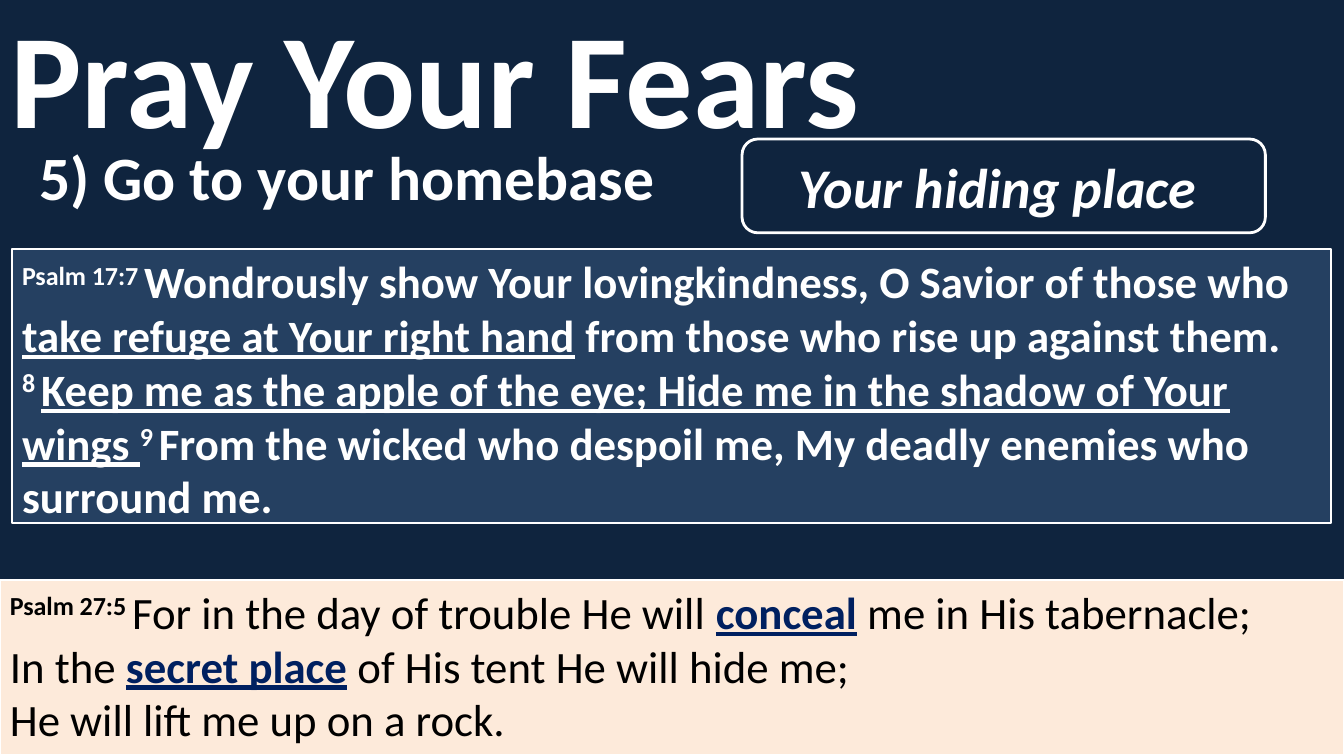
from pptx import Presentation
from pptx.dml.color import RGBColor
from pptx.enum.shapes import MSO_SHAPE
from pptx.enum.text import MSO_ANCHOR, MSO_AUTO_SIZE, PP_ALIGN
from pptx.oxml.ns import qn
from pptx.util import Emu, Pt

PX = 9144  # one px is a hundredth of an inch
FONT = "Calibri"
NAVY, BLUE, PEACH = "0F243E", "254061", "FDEADA"
WHITE, BLACK, DEEP_BLUE = "FFFFFF", "000000", "002060"


def colour(hex_string):
    return RGBColor.from_string(hex_string)


def place(shape, box):
    shape.left, shape.top, shape.width, shape.height = [Emu(value * PX) for value in box]


def add_run(paragraph, text, size, hex_string, bold=True, italic=False,
            underline=False, raised=False):
    run = paragraph.add_run()
    run.text = text
    font = run.font
    font.name, font.size, font.bold = FONT, Pt(size), bold
    font.italic, font.underline = italic, underline
    font.color.rgb = colour(hex_string)
    if raised:
        font._element.set("baseline", "30000")


def prepare_text(shape, anchor, alignment=PP_ALIGN.LEFT):
    frame = shape.text_frame
    frame.word_wrap = True
    frame.auto_size = MSO_AUTO_SIZE.NONE
    frame.vertical_anchor = anchor
    paragraph = frame.paragraphs[0]
    paragraph.alignment = alignment
    return paragraph


def add_panel(slide, kind, box, fill, line_width):
    panel = slide.shapes.add_shape(kind, 0, 0, 0, 0)
    place(panel, box)
    panel.shadow.inherit = False
    panel.fill.solid()
    panel.fill.fore_color.rgb = colour(fill)
    panel.line.color.rgb = colour(WHITE)
    panel.line.width = Pt(line_width)
    return panel


# Title and numbered point
def fill_heading(slide, box):
    left, top, width, height = box
    title, point = slide.placeholders
    place(title, (left, top, width, 151))
    add_run(prepare_text(title, MSO_ANCHOR.MIDDLE), "Pray Your Fears", 96, WHITE)

    place(point, (left + 29, top + 134, 704, height - 134))
    paragraph = prepare_text(point, MSO_ANCHOR.TOP)
    paragraph.space_before = Pt(0)
    properties = paragraph._p.get_or_add_pPr()
    properties.set("marL", "0")
    properties.set("indent", "0")
    properties.append(properties.makeelement(qn("a:buNone"), {}))
    add_run(paragraph, "5) Go to your homebase", 44, WHITE)


# Rounded label
def add_label(slide, box, text):
    label = add_panel(slide, MSO_SHAPE.ROUNDED_RECTANGLE, box, NAVY, 2)
    paragraph = prepare_text(label, MSO_ANCHOR.MIDDLE, PP_ALIGN.CENTER)
    add_run(paragraph, text, 40, WHITE, italic=True)


# Scripture panel: each line holds pairs of text and run style
def add_scripture(slide, box, fill, lines):
    panel = add_panel(slide, MSO_SHAPE.RECTANGLE, box, fill, 1.5)
    paragraph = prepare_text(panel, MSO_ANCHOR.TOP)
    for index, line in enumerate(lines):
        if index:
            paragraph.add_line_break()
        for text, style in line:
            add_run(paragraph, text, 32, **style)


def main():
    presentation = Presentation()
    presentation.slide_width = Emu(1333 * PX)
    presentation.slide_height = Emu(750 * PX)
    slide = presentation.slides.add_slide(presentation.slide_layouts[1])
    slide.background.fill.solid()
    slide.background.fill.fore_color.rgb = colour(NAVY)

    fill_heading(slide, (0, -1, 1333, 218))
    add_label(slide, (736, 138, 519, 93), "Your hiding place ")

    # Run styles
    strong = {"hex_string": WHITE}
    stressed = {"hex_string": WHITE, "underline": True}
    verse = {"hex_string": WHITE, "raised": True}
    plain = {"hex_string": BLACK, "bold": False}
    keyword = {"hex_string": DEEP_BLUE, "underline": True}
    reference = {"hex_string": BLACK, "raised": True}

    add_scripture(slide, (12, 247, 1308, 272), BLUE, [
        [("Psalm 17:7 ", verse),
         ("Wondrously show Your lovingkindness, O Savior of those who ", strong),
         ("take refuge at Your right hand", stressed),
         (" from those who rise up against them.", strong)],
        [("8 ", verse),
         ("Keep me as the apple of the eye; Hide me in the shadow of Your wings ", stressed),
         ("9 ", verse),
         ("From the wicked who despoil me, My deadly enemies who surround me.", strong)],
    ])
    add_scripture(slide, (0, 575, 1333, 174), PEACH, [
        [("Psalm 27:5 ", reference),
         ("For in the day of trouble He will ", plain),
         ("conceal", keyword),
         (" me in His tabernacle;", plain)],
        [("In the ", plain),
         ("secret place", keyword),
         (" of His tent He will hide me;", plain)],
        [("He will lift me up on a rock.", plain)],
    ])
    presentation.save("out.pptx")


if __name__ == "__main__":
    main()
